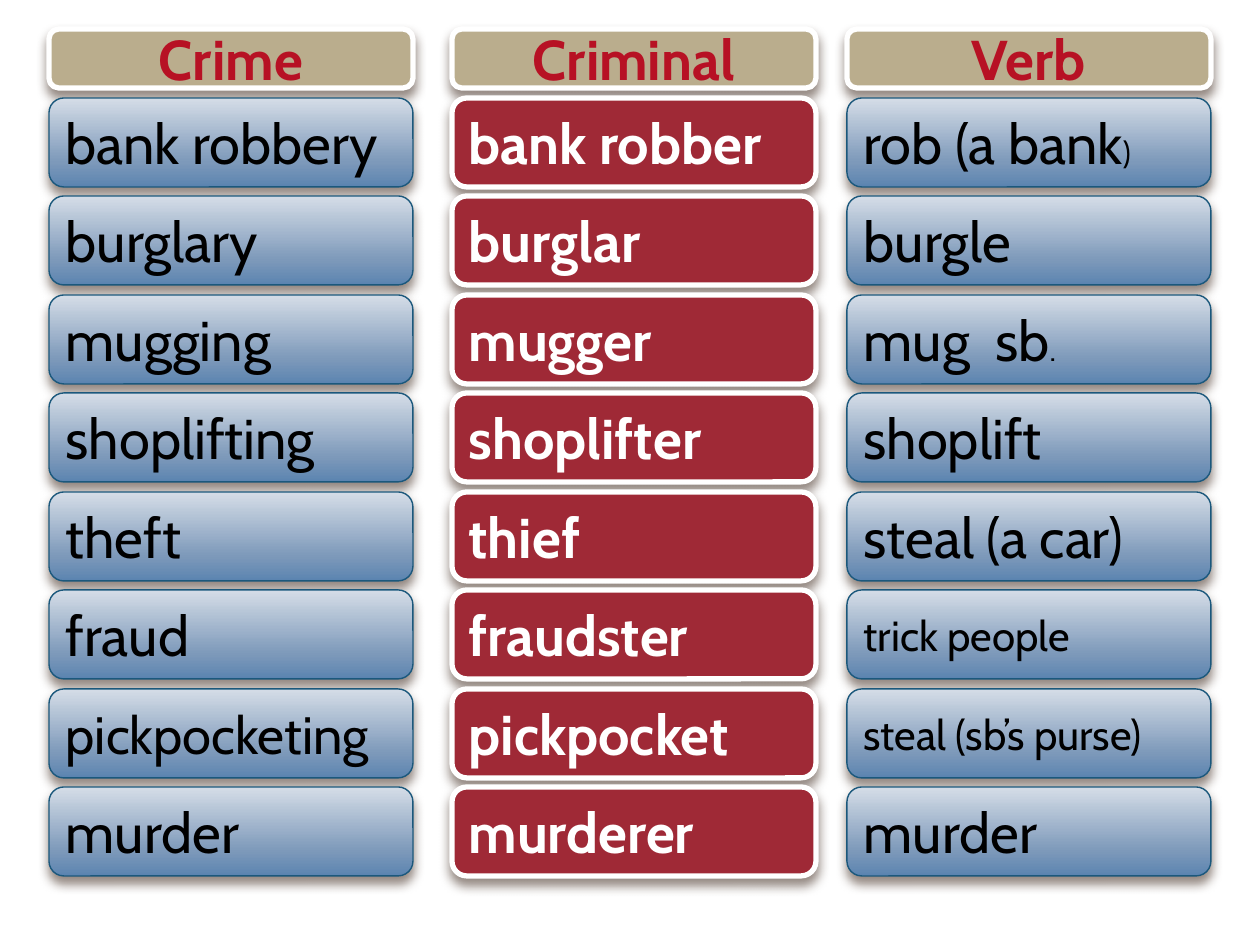
"""Build a vocabulary slide of crimes, criminals and verbs."""
from lxml.etree import SubElement
from pptx import Presentation
from pptx.dml.color import RGBColor
from pptx.enum.shapes import MSO_SHAPE
from pptx.enum.text import MSO_ANCHOR, PP_ALIGN
from pptx.oxml.ns import qn
from pptx.util import Pt

ROUNDED = MSO_SHAPE.ROUNDED_RECTANGLE
MIDDLE = MSO_ANCHOR.MIDDLE
LEFT, CENTER = PP_ALIGN.LEFT, PP_ALIGN.CENTER
PX = 914400 // 126

COLUMN_LEFTS = (49, 452, 847)
COLUMN_WIDTH = 364
HEADER_TOP, HEADER_HEIGHT = 29, 59
FIRST_ROW_TOP, ROW_HEIGHT, TWO_ROW_PITCH = 98, 89, 197

BLUE_STOPS = ((0, "D5DDE7"), (72, "7D99BA"), (100, "5B84B0"))
HEADER = dict(fill="BAAD8D", line="FFFFFF", weight=3, color="B71124", bold=True, align=CENTER)
CRIMINAL = dict(fill="9F2936", line="FFFFFF", weight=3, color="FFFFFF", bold=True)
BLUE = dict(fill=BLUE_STOPS, line="1B587C", weight=0.79, color="000000")

HEADERS = ("Crime", "Criminal", "Verb")
COLUMN_STYLES = (BLUE, CRIMINAL, BLUE)
ROWS = (
    ("bank robbery", "bank robber", (("rob (a bank", 32), (")", 18))),
    ("burglary", "burglar", "burgle"),
    ("mugging", "mugger", (("mug  sb", 32), (".", 18))),
    ("shoplifting", "shoplifter", "shoplift"),
    ("theft", "thief", "steal (a car)"),
    ("fraud", "fraudster", (("trick people", 24),)),
    ((("pickpocketing", 30),), "pickpocket", (("steal (sb’s purse)", 24),)),
    ("murder", "murderer", "murder"),
)


def rgb(value):
    return RGBColor.from_string(value)


def add_run(p, text, size=32, color="000000", bold=False, font="Cabin"):
    r = p.add_run()
    r.text = text
    r.font.name = font
    r.font.size = Pt(size)
    r.font.bold = bold
    r.font.color.rgb = rgb(color)


class Deck:
    def __init__(self, slide):
        self.s = slide
        self.shadow_color = "4E3B30"

    def gradient(self, sp, stops):
        sp.fill.gradient()
        sp.fill.gradient_angle = 270
        stop_list = sp._element.spPr.find(qn("a:gradFill")).find(qn("a:gsLst"))
        for old in list(stop_list):
            stop_list.remove(old)
        for position, color in stops:
            stop = SubElement(stop_list, qn("a:gs"), pos=str(position * 1000))
            SubElement(stop, qn("a:srgbClr"), val=color)

    def shadow(self, sp):
        sp.shadow.inherit = False
        effects = sp._element.spPr.find(qn("a:effectLst"))
        outer = SubElement(effects, qn("a:outerShdw"), blurRad=str(Pt(6)), dist=str(Pt(4)),
                           dir="5400000", rotWithShape="0")
        color = SubElement(outer, qn("a:srgbClr"), val=self.shadow_color)
        SubElement(color, qn("a:alpha"), val="60000")

    def card(self, x, y, w, h, content, fill, line, weight, color, bold=False, align=LEFT):
        sp = self.s.shapes.add_shape(ROUNDED, x * PX, y * PX, w * PX, h * PX)
        if isinstance(fill, str):
            sp.fill.solid()
            sp.fill.fore_color.rgb = rgb(fill)
        else:
            self.gradient(sp, fill)
        sp.line.color.rgb = rgb(line)
        sp.line.width = Pt(weight)
        self.shadow(sp)
        tf = sp.text_frame
        tf.word_wrap = True
        tf.vertical_anchor = MIDDLE
        p = tf.paragraphs[0]
        p.alignment = align
        runs = ((content, 32),) if isinstance(content, str) else content
        for text, size in runs:
            add_run(p, text, size=size, color=color, bold=bold)


def main():
    prs = Presentation()
    prs.slide_width, prs.slide_height = 1260 * PX, 945 * PX
    deck = Deck(prs.slides.add_slide(prs.slide_layouts[6]))
    for x, header in zip(COLUMN_LEFTS, HEADERS):
        deck.card(x, HEADER_TOP, COLUMN_WIDTH, HEADER_HEIGHT, header, **HEADER)
    for i, row in enumerate(ROWS):
        y = FIRST_ROW_TOP + i * TWO_ROW_PITCH // 2
        for x, content, style in zip(COLUMN_LEFTS, row, COLUMN_STYLES):
            deck.card(x, y, COLUMN_WIDTH, ROW_HEIGHT, content, **style)
    prs.save("out.pptx")


if __name__ == "__main__":
    main()
